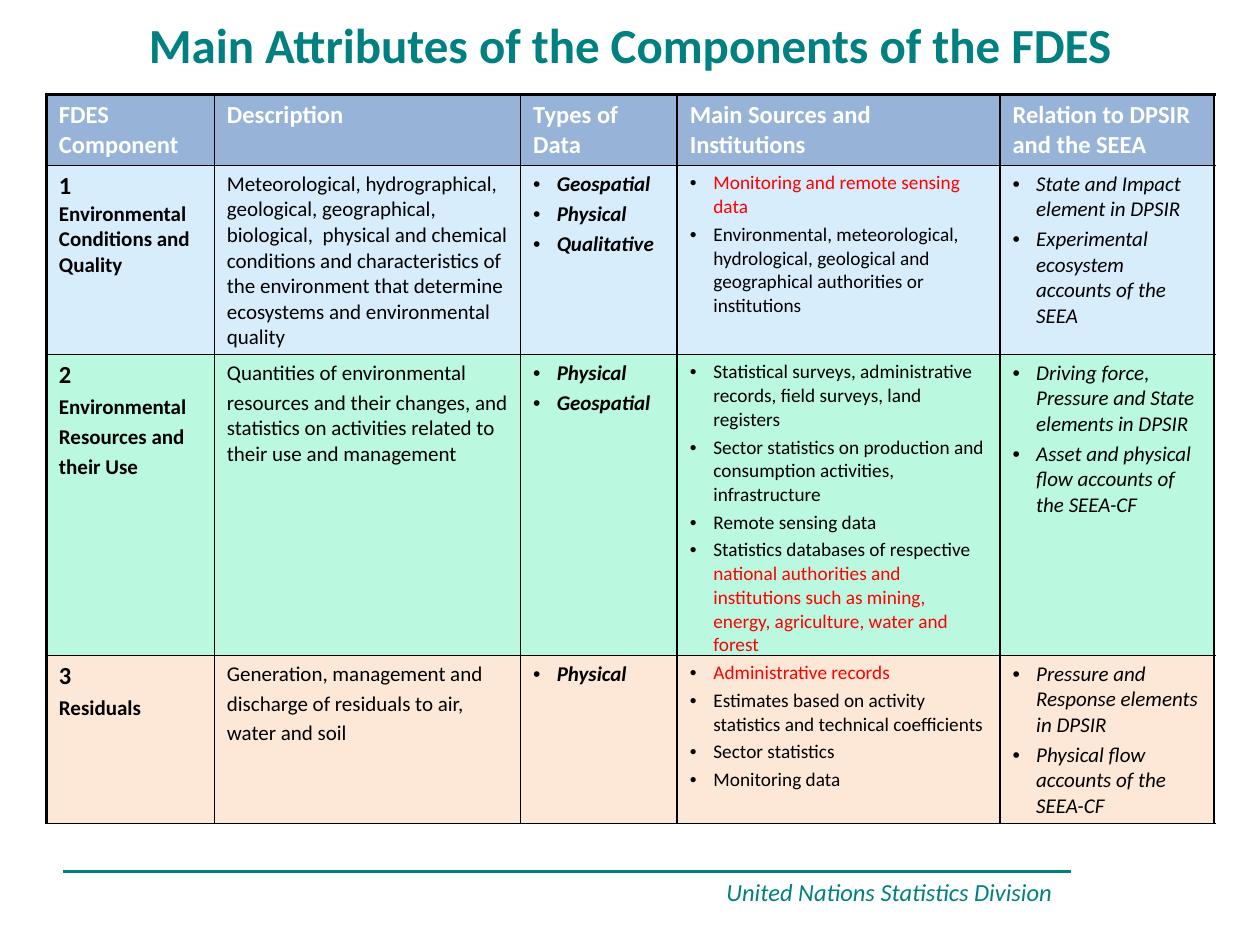
import pptx
import pptx.dml.color
import pptx.enum.shapes
import pptx.enum.text
import pptx.oxml.ns
import pptx.util
from lxml import etree

Pt = pptx.util.Pt
qn = pptx.oxml.ns.qn
FONT = "Calibri"
COLORS = {
    "teal": "008080",
    "black": "000000",
    "white": "FFFFFF",
    "red": "FF0000",
    "header": "4F81BD",
    "conditions": "D8EDFC",
    "resources": "BAF8E0",
    "residuals": "FDE8D7",
}

COLUMN_WIDTHS = [96, 175, 89.5, 184.5, 122.5]
ROW_HEIGHTS = [40.5, 108, 172, 96]
HEADER_STYLE = {"size": 14, "bold": True, "color": "white"}
COLUMN_STYLES = [
    {"size": 12, "bold": True},
    {"size": 12},
    {"size": 12, "bold": True, "italic": True, "bullet": True},
    {"size": 11, "bullet": True},
    {"size": 12, "italic": True, "bullet": True},
]
HEADINGS = [
    "FDES Component",
    "Description",
    "Types of Data",
    "Main Sources and Institutions",
    "Relation to DPSIR and the SEEA",
]


def number(text):
    return text, {"size": 14}


def red(text):
    return text, {"color": "red"}


COMPONENTS = [
    ("conditions", [
        [[number("1"), " Environmental Conditions and Quality"]],
        ["Meteorological, hydrographical, geological, geographical, biological,  physical and "
         "chemical conditions and characteristics of the environment that determine ecosystems "
         "and environmental quality"],
        ["Geospatial", "Physical", "Qualitative"],
        [[red("Monitoring and remote sensing data")],
         "Environmental, meteorological, hydrological, geological and geographical authorities "
         "or institutions"],
        ["State and Impact element in DPSIR", "Experimental ecosystem accounts of the SEEA"],
    ]),
    ("resources", [
        [[number("2")], "Environmental", "Resources and", "their Use"],
        ["Quantities of environmental",
         "resources and their changes, and statistics on activities related to their use and "
         "management"],
        ["Physical", "Geospatial"],
        ["Statistical surveys, administrative records, field surveys, land registers",
         "Sector statistics on production and consumption activities, infrastructure",
         "Remote sensing data",
         ["Statistics databases of respective ",
          red("national authorities and institutions such as mining, energy, agriculture, "
              "water and forest")]],
        ["Driving force, Pressure and State elements in DPSIR",
         "Asset and physical flow accounts of the SEEA-CF"],
    ]),
    ("residuals", [
        [[number("3")], "Residuals"],
        ["Generation, management and", "discharge of residuals to air,", "water and soil"],
        ["Physical"],
        [[red("Administrative records")],
         "Estimates based on activity statistics and technical coefficients",
         "Sector statistics",
         "Monitoring data"],
        ["Pressure and Response elements in DPSIR", "Physical flow accounts of the SEEA-CF"],
    ]),
]


def rgb(name):
    return pptx.dml.color.RGBColor.from_string(COLORS[name])


def set_font(font, size, color="black", bold=False, italic=False):
    font.name = FONT
    font.size = Pt(size)
    font.bold = bold
    font.italic = italic
    font.color.rgb = rgb(color)


def add_bullet(paragraph):
    properties = paragraph._p.get_or_add_pPr()
    properties.set("marL", str(Pt(13.5)))
    properties.set("indent", str(Pt(-13.5)))
    color = etree.SubElement(properties, qn("a:buClr"))
    etree.SubElement(color, qn("a:srgbClr"), val=COLORS["black"])
    etree.SubElement(properties, qn("a:buFont"), typeface="Arial")
    etree.SubElement(properties, qn("a:buChar"), char="•")


def fill_paragraph(paragraph, content, style, is_first):
    style = dict(style)
    if style.pop("bullet", False):
        add_bullet(paragraph)
    pieces = [content] if isinstance(content, str) else content
    runs = [(piece, {}) if isinstance(piece, str) else piece for piece in pieces]
    if not is_first:
        paragraph.space_before = Pt(0.2 * style["size"])
    for text, _ in runs:
        paragraph.add_run().text = text
    if len(runs) == 1:
        set_font(paragraph.font, **{**style, **runs[0][1]})
    else:
        for run, (_, changes) in zip(paragraph.runs, runs):
            set_font(run.font, **{**style, **changes})


def set_borders(cell, widths):
    properties = cell._tc.get_or_add_tcPr()
    for position, (side, width) in enumerate(widths.items()):
        border = etree.Element(qn(f"a:{side}"), w=str(Pt(width)))
        solid = etree.SubElement(border, qn("a:solidFill"))
        etree.SubElement(solid, qn("a:srgbClr"), val=COLORS["black"])
        properties.insert(position, border)


def fill_cell(cell, paragraphs, style, background):
    cell.margin_left = cell.margin_right = Pt(7.2)
    cell.margin_top, cell.margin_bottom = Pt(3.5), Pt(2)
    cell.fill.solid()
    cell.fill.fore_color.rgb = rgb(background)
    if background == "header":
        shade = cell._tc.tcPr.find(".//" + qn("a:srgbClr"))
        etree.SubElement(shade, qn("a:alpha"), val="59000")
    frame = cell.text_frame
    for index, content in enumerate(paragraphs):
        paragraph = frame.add_paragraph() if index else frame.paragraphs[0]
        fill_paragraph(paragraph, content, style, index == 0)


def place_title(slide, left, top, width, height):
    title = slide.shapes.title
    title.left, title.top, title.width, title.height = map(Pt, (left, top, width, height))
    frame = title.text_frame
    frame.margin_left = frame.margin_right = frame.margin_top = frame.margin_bottom = 0
    frame.vertical_anchor = pptx.enum.text.MSO_ANCHOR.BOTTOM
    frame.auto_size = pptx.enum.text.MSO_AUTO_SIZE.NONE
    frame.text = "Main Attributes of the Components of the FDES"
    heading = frame.paragraphs[0]
    heading.alignment = pptx.enum.text.PP_ALIGN.CENTER
    set_font(heading.font, 28, "teal", bold=True)


def place_attributes(slide, left, top):
    rows = [("header", [[heading] for heading in HEADINGS])] + COMPONENTS
    attributes = slide.shapes.add_table(
        len(rows), len(HEADINGS), Pt(left), Pt(top),
        Pt(sum(COLUMN_WIDTHS)), Pt(sum(ROW_HEIGHTS))).table
    attributes.first_row = attributes.horz_banding = False
    for column, width in zip(attributes.columns, COLUMN_WIDTHS):
        column.width = Pt(width)
    last = len(HEADINGS) - 1
    for r, (background, cells) in enumerate(rows):
        attributes.rows[r].height = Pt(ROW_HEIGHTS[r])
        for c, paragraphs in enumerate(cells):
            cell = attributes.cell(r, c)
            fill_cell(cell, paragraphs, COLUMN_STYLES[c] if r else HEADER_STYLE, background)
            set_borders(cell, {"lnL": 1 if c else 1.5, "lnR": 1.5 if c == last else 1,
                               "lnT": 1 if r else 1.5, "lnB": 1})


def place_footer(slide, left, top, width):
    rule = slide.shapes.add_connector(
        pptx.enum.shapes.MSO_CONNECTOR.STRAIGHT,
        Pt(left), Pt(top), Pt(left + width), Pt(top))
    rule.line.color.rgb = rgb("teal")
    rule.line.width = Pt(1.5)
    etree.SubElement(rule._element.spPr, qn("a:effectLst"))
    division_width = 204
    division = slide.shapes.add_textbox(
        Pt(left + width - division_width), Pt(top - 0.5), Pt(division_width), Pt(24.5))
    frame = division.text_frame
    frame.word_wrap = False
    frame.auto_size = pptx.enum.text.MSO_AUTO_SIZE.SHAPE_TO_FIT_TEXT
    frame.text = "United Nations Statistics Division"
    set_font(frame.paragraphs[0].font, 14, "teal", italic=True)


def main():
    deck = pptx.Presentation()
    deck.slide_width, deck.slide_height = Pt(720), Pt(540)
    slide = deck.slides.add_slide(deck.slide_layouts[5])
    place_footer(slide, 36, 498, 576)
    place_title(slide, 35, 8, 650, 34)
    place_attributes(slide, 26.5, 54)
    deck.save("out.pptx")


if __name__ == "__main__":
    main()
